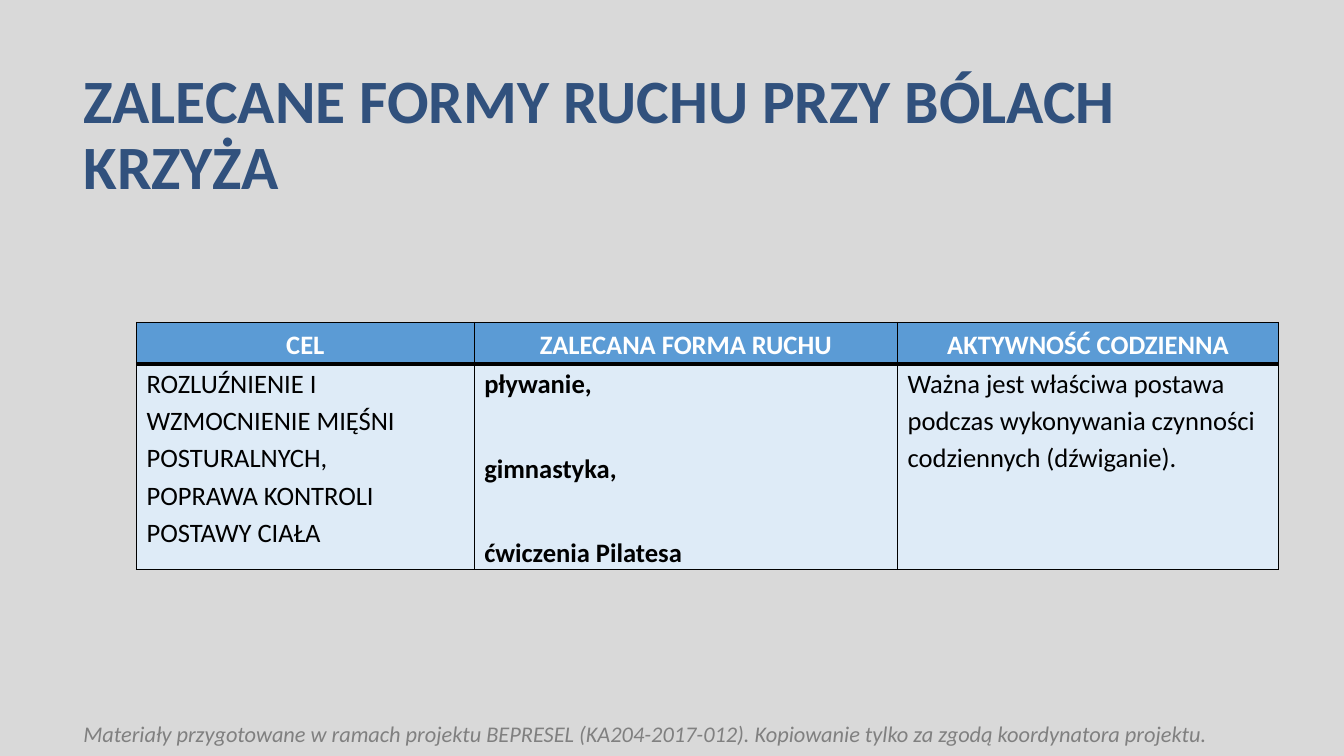
from lxml import etree
from pptx import Presentation
from pptx.dml.color import RGBColor
from pptx.enum import text as txt
from pptx.oxml import ns
from pptx.util import Pt

GREY = RGBColor(0xD9, 0xD9, 0xD9)
NAVY = RGBColor(0x31, 0x51, 0x7D)
BLUE = RGBColor(0x5B, 0x9B, 0xD5)
PALE_BLUE = RGBColor(0xDE, 0xEB, 0xF7)
NOTE_GREY = RGBColor(0x80, 0x80, 0x80)
WHITE = RGBColor(0xFF, 0xFF, 0xFF)
BLACK = RGBColor(0, 0, 0)

# heading, width, paragraphs, bold, space between paragraphs
COLUMNS = [
    ("CEL", 241.2,
     ["ROZLUŹNIENIE I WZMOCNIENIE MIĘŚNI POSTURALNYCH,",
      "POPRAWA KONTROLI POSTAWY CIAŁA"], False, 0),
    ("ZALECANA FORMA RUCHU", 302.4,
     ["pływanie,", "gimnastyka,", "ćwiczenia Pilatesa"], True, 33.7),
    ("AKTYWNOŚĆ CODZIENNA", 272.2,
     ["Ważna jest właściwa postawa podczas wykonywania czynności "
      "codziennych (dźwiganie)."], False, 0),
]


def style(paragraph, size, color, bold=False, italic=False):
    font = paragraph.font
    font.name = "Calibri"
    font.size = Pt(size)
    font.color.rgb = color
    font.bold = bold
    font.italic = italic


def add_borders(cell, **widths):
    """Draw black cell edges; widths in points, keyed L, R, T, B in that order."""
    properties = cell._tc.get_or_add_tcPr()
    for position, (side, width) in enumerate(widths.items()):
        line = etree.Element(ns.qn(f"a:ln{side}"), w=str(Pt(width)))
        fill = etree.SubElement(line, ns.qn("a:solidFill"))
        etree.SubElement(fill, ns.qn("a:srgbClr"), val=str(BLACK))
        properties.insert(position, line)


def fill_cell(cell, paragraphs, fill, color, bold, align, gap=0):
    cell.margin_top = cell.margin_bottom = 0
    cell.fill.solid()
    cell.fill.fore_color.rgb = fill
    cell.text = "\n".join(paragraphs)
    for index, paragraph in enumerate(cell.text_frame.paragraphs):
        style(paragraph, 19, color, bold)
        paragraph.alignment = align
        paragraph.line_spacing = 1.15
        paragraph.space_before = Pt(gap if index else 0)


def set_title(slide, wording):
    title = slide.shapes.title
    title.left, title.top, title.width, title.height = Pt(52.5), Pt(52.5), Pt(864), Pt(90)
    frame = title.text_frame
    frame.text = wording
    frame.auto_size = txt.MSO_AUTO_SIZE.NONE
    frame.vertical_anchor = txt.MSO_ANCHOR.MIDDLE
    heading = frame.paragraphs[0]
    heading.alignment = txt.PP_ALIGN.LEFT
    heading.line_spacing = 0.9
    style(heading, 44, NAVY, bold=True)


def add_exercise_table(slide):
    table = slide.shapes.add_table(
        2, len(COLUMNS), Pt(97.5), Pt(230.4), Pt(815.8), Pt(172.8)).table
    table.rows[0].height = Pt(29.5)
    table.rows[1].height = Pt(143.3)
    for index, (heading, width, paragraphs, bold, gap) in enumerate(COLUMNS):
        table.columns[index].width = Pt(width)
        head, body = table.cell(0, index), table.cell(1, index)
        fill_cell(head, [heading], BLUE, WHITE, True, txt.PP_ALIGN.CENTER)
        head.vertical_anchor = txt.MSO_ANCHOR.MIDDLE
        add_borders(head, L=1, R=1, T=1, B=3)
        fill_cell(body, paragraphs, PALE_BLUE, BLACK, bold, txt.PP_ALIGN.LEFT, gap)
        add_borders(body, L=1, R=1, T=3, B=1)


def add_footnote(slide, wording):
    frame = slide.shapes.add_textbox(Pt(52.5), Pt(511.2), Pt(900), Pt(26.6)).text_frame
    frame.word_wrap = True
    frame.text = wording
    style(frame.paragraphs[0], 16, NOTE_GREY, italic=True)


def main():
    deck = Presentation()
    deck.slide_width, deck.slide_height = Pt(960), Pt(540)
    slide = deck.slides.add_slide(deck.slide_layouts[5])
    slide.background.fill.solid()
    slide.background.fill.fore_color.rgb = GREY
    set_title(slide, "ZALECANE FORMY RUCHU PRZY BÓLACH KRZYŻA")
    add_exercise_table(slide)
    add_footnote(slide, "Materiały przygotowane w ramach projektu BEPRESEL (KA204-2017-012). "
                        "Kopiowanie tylko za zgodą koordynatora projektu.")
    deck.save("out.pptx")


if __name__ == "__main__":
    main()
